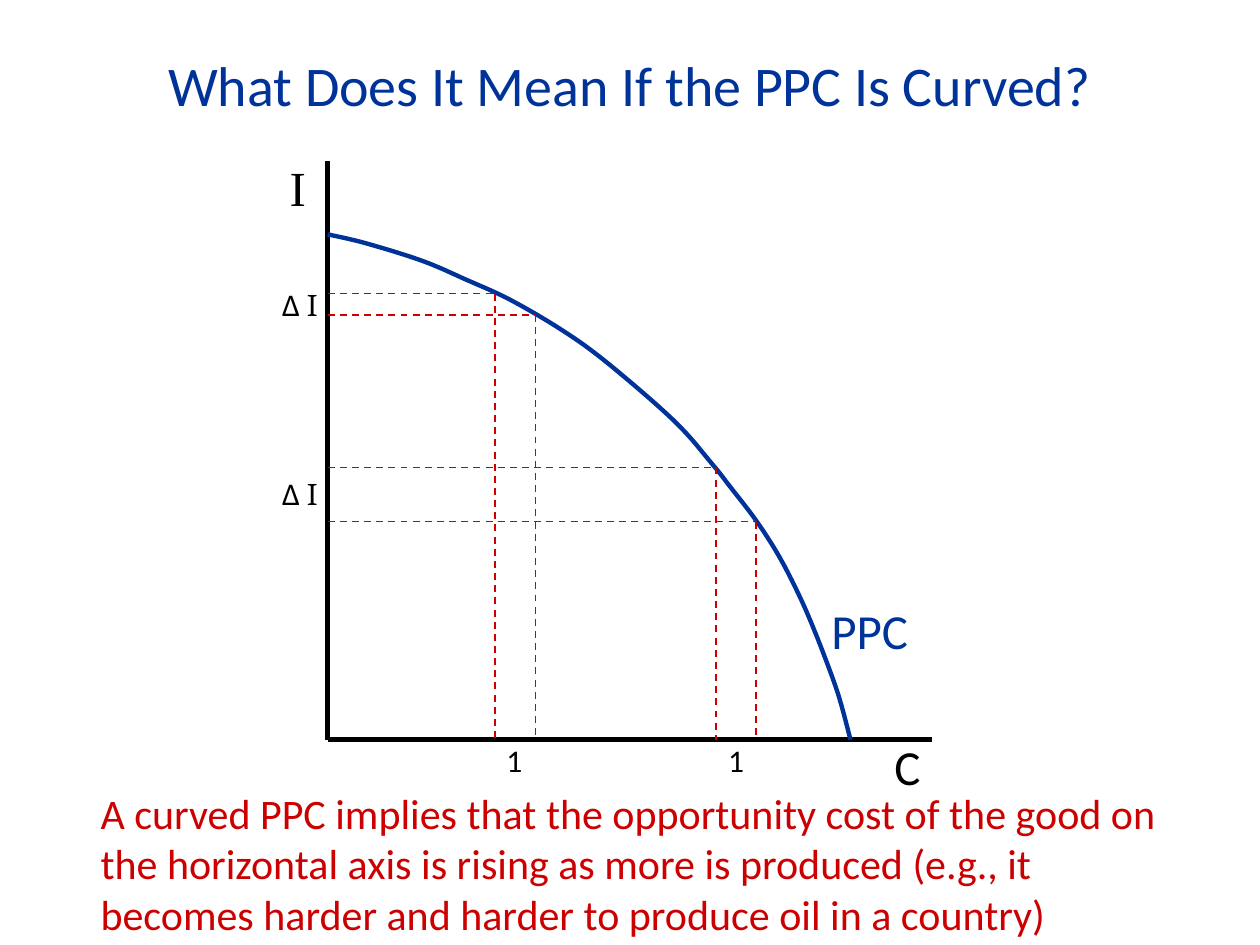
from dataclasses import dataclass

from lxml import etree
from pptx import Presentation
from pptx.dml.color import RGBColor as RGB
from pptx.enum.dml import MSO_LINE_DASH_STYLE as DASH
from pptx.enum.shapes import MSO_CONNECTOR as CONN
from pptx.enum.text import MSO_ANCHOR as ANCHOR, MSO_AUTO_SIZE as FIT, PP_ALIGN as ALIGN
from pptx.oxml.ns import qn
from pptx.util import Inches, Pt


@dataclass(frozen=True)
class Theme:
    """Colours, fonts, type sizes and line widths."""
    blue: RGB = RGB(0x00, 0x33, 0x99)
    red: RGB = RGB(0xCC, 0x00, 0x00)
    black: RGB = RGB(0, 0, 0)
    font: str = "Calibri"
    serif: str = "Times New Roman"
    math: str = "Cambria"
    title: int = 32
    label: int = 28
    body: int = 24
    tick: int = 18
    heavy: float = 2.5
    thin: float = 1


T = Theme()
LEFT, TOP, RIGHT, BASE = 2.6, 1.28, 7.4, 5.87
CURVE = [(2.6, 1.86), (2.9, 1.93), (3.35, 2.07), (3.7, 2.22), (4.05, 2.38),
         (4.46, 2.62), (4.82, 2.88), (5.35, 3.34), (5.65, 3.68), (5.8, 3.87),
         (6, 4.13), (6.18, 4.41), (6.34, 4.72), (6.47, 5.02), (6.6, 5.36),
         (6.67, 5.57), (6.75, 5.87)]
GUIDES = [(3.93, 2.33), (4.25, 2.5), (5.68, 3.71), (6, 4.14)]


def add_text(s, box, runs, size, color, wrap=False, align=ALIGN.LEFT, anchor=ANCHOR.TOP):
    """Add a text box with (text, font) runs."""
    tf = s.shapes.add_textbox(*map(Inches, box)).text_frame
    tf.word_wrap = wrap
    tf.auto_size = FIT.SHAPE_TO_FIT_TEXT
    tf.vertical_anchor = anchor
    p = tf.paragraphs[0]
    p.alignment = align
    for text, font in runs:
        r = p.add_run()
        r.text = text
        r.font.name = font
        r.font.size = Pt(size)
        r.font.color.rgb = color


def add_line(s, start, end, color, width, dash=None):
    """Add a straight connector without a shadow."""
    c = s.shapes.add_connector(CONN.STRAIGHT, *map(Inches, (*start, *end)))
    c.line.color.rgb = color
    c.line.width = Pt(width)
    if dash:
        c.line.dash_style = dash
    etree.SubElement(c._element.spPr, qn("a:effectLst"))


def smooth(points, steps=8):
    """Return points along a Catmull-Rom spline through the given points."""
    padded = [points[0], *points, points[-1]]
    result = [points[0]]
    for quad in zip(padded, padded[1:], padded[2:], padded[3:]):
        for t in (i / steps for i in range(1, steps + 1)):
            result.append(tuple(
                b + t * (c - a) / 2 + t**2 * (2 * a - 5 * b + 4 * c - d) / 2
                + t**3 * (3 * b - a - 3 * c + d) / 2
                for a, b, c, d in zip(*quad)))
    return result


def add_curve(s, points, color, width):
    """Add an open smooth curve."""
    first, *rest = [(Inches(x), Inches(y)) for x, y in smooth(points)]
    fb = s.shapes.build_freeform(*first)
    fb.add_line_segments(rest, close=False)
    sp = fb.convert_to_shape()
    sp.shadow.inherit = False
    sp.fill.background()
    sp.line.color.rgb = color
    sp.line.width = Pt(width)


def add_guides(s):
    """Add the dashed guides from the curve to both axes."""
    for x, y in GUIDES:
        add_line(s, (LEFT, y), (x, y), T.red, T.thin, DASH.DASH)
        add_line(s, (x, y), (x, BASE), T.red, T.thin, DASH.DASH)


def main():
    """Build the slide and save it."""
    prs = Presentation()
    prs.slide_width, prs.slide_height = Inches(10), Inches(7.5)
    s = prs.slides.add_slide(prs.slide_layouts[6])
    add_text(s, (0.7, 0.35, 8.6, 0.64), [("What Does It Mean If the PPC Is Curved?", T.font)],
             T.title, T.blue, True, ALIGN.CENTER, ANCHOR.MIDDLE)
    add_text(s, (7, 5.8, 0.5, 0.57), [("C", T.font)], T.label, T.black)
    add_text(s, (2.2, 1.2, 0.42, 0.57), [("I", T.serif)], T.label, T.black)
    add_line(s, (LEFT, TOP), (LEFT, BASE), T.black, T.heavy)
    add_line(s, (LEFT, BASE), (RIGHT, BASE), T.black, T.heavy)
    add_curve(s, CURVE, T.blue, T.heavy)
    add_text(s, (6.5, 4.72, 1, 0.57), [("PPC", T.font)], T.label, T.blue)
    add_text(s, (0.7, 6.2, 8.6, 1.31),
             [("A curved PPC implies that the opportunity cost of the good on the horizontal "
               "axis is rising as more is produced (e.g., it becomes harder and harder to "
               "produce oil in a country)", T.font)], T.body, T.red, True)
    add_guides(s)
    for x in (3.92, 5.68):
        add_text(s, (x, 5.83, 0.33, 0.4), [("1", T.font)], T.tick, T.black)
    for y in (2.21, 3.71):
        add_text(s, (2.14, y, 0.5, 0.4), [("Δ ", T.font), ("I", T.math)], T.tick, T.black)
    prs.save("out.pptx")


if __name__ == "__main__":
    main()
